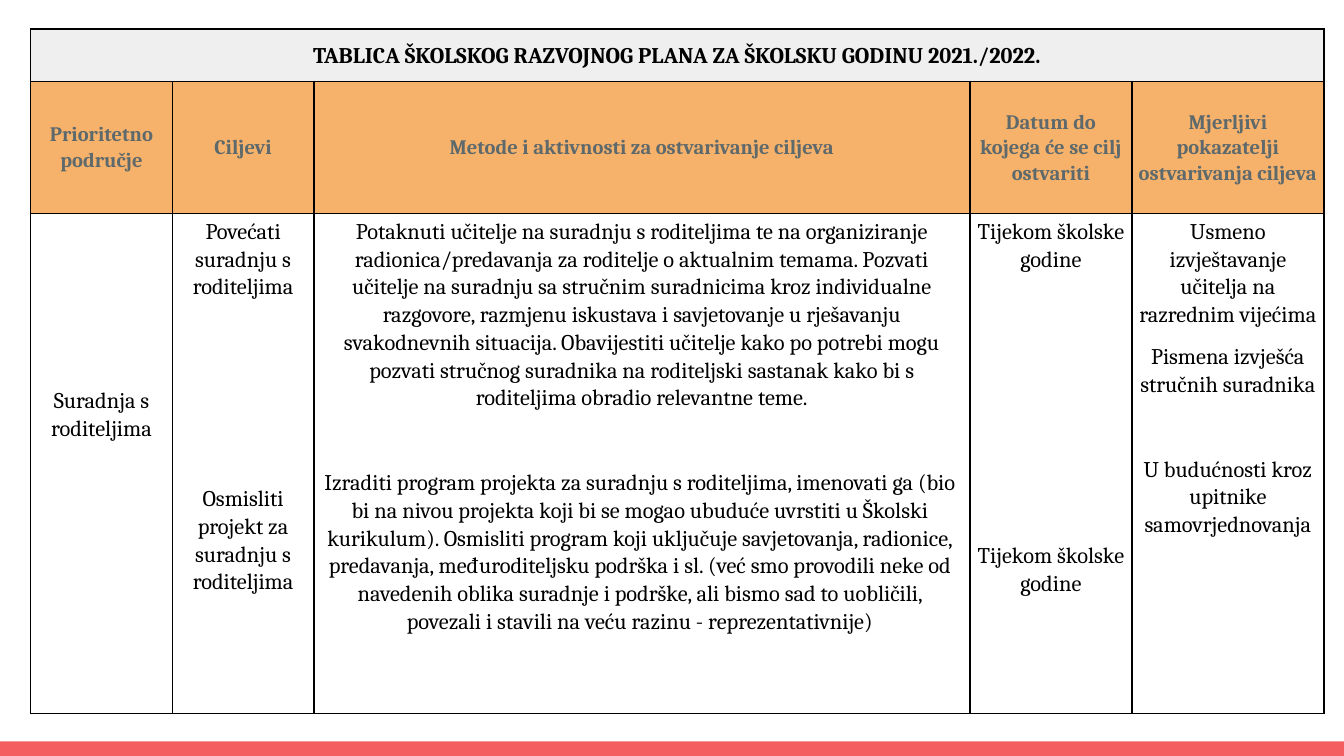
from dataclasses import dataclass

from lxml.etree import SubElement
from pptx import Presentation
from pptx.dml.color import RGBColor
from pptx.enum.shapes import MSO_SHAPE
from pptx.enum.text import MSO_ANCHOR, PP_ALIGN
from pptx.oxml.ns import qn
from pptx.util import Pt


@dataclass(frozen=True)
class Theme:
    font: str = "Cambria"
    black: str = "000000"
    white: str = "FFFFFF"
    title_fill: str = "EFEFEF"
    header_fill: str = "F6B26B"
    header_text: str = "5E696C"
    accent: str = "F55E61"
    body_size: float = 12
    header_size: float = 11
    line_spacing: float = 1.08
    gap: float = 7.7
    row_step: float = 22.7  # one text line plus the gap


THEME = Theme()

COLUMNS = [76, 75.7, 351.6, 86.7, 102.9]
ROWS = [28, 70.8, 268]
METHODS = 2  # column whose first paragraph is set slightly narrower

TITLE = "TABLICA ŠKOLSKOG RAZVOJNOG PLANA ZA ŠKOLSKU GODINU 2021./2022."
HEADERS = [
    "Prioritetno područje",
    "Ciljevi",
    "Metode i aktivnosti za ostvarivanje ciljeva",
    "Datum do kojega će se cilj ostvariti",
    "Mjerljivi pokazatelji ostvarivanja ciljeva",
]
# Each column holds (steps of extra space above, text)
PLAN = [
    [(4, "Suradnja s roditeljima")],
    [(0, "Povećati suradnju s roditeljima"),
     (4, "Osmisliti projekt za suradnju s roditeljima")],
    [(0, "Potaknuti učitelje na suradnju s roditeljima te na organiziranje "
         "radionica/predavanja za roditelje o aktualnim temama. Pozvati učitelje "
         "na suradnju sa stručnim suradnicima kroz individualne razgovore, "
         "razmjenu iskustava i savjetovanje u rješavanju svakodnevnih situacija. "
         "Obavijestiti učitelje kako po potrebi mogu pozvati stručnog suradnika "
         "na roditeljski sastanak kako bi s roditeljima obradio relevantne teme."),
     (1, "Izraditi program projekta za suradnju s roditeljima, imenovati ga (bio "
         "bi na nivou projekta koji bi se mogao ubuduće uvrstiti u Školski "
         "kurikulum). Osmisliti program koji uključuje savjetovanja, radionice, "
         "predavanja, međuroditeljsku podrška i sl. (već smo provodili neke od "
         "navedenih oblika suradnje i podrške, ali bismo sad to uobličili, "
         "povezali i stavili na veću razinu - reprezentativnije)")],
    [(0, "Tijekom školske godine"), (6, "Tijekom školske godine")],
    [(0, "Usmeno izvještavanje učitelja na razrednim vijećima"),
     (0, "Pismena izvješća stručnih suradnika"),
     (1, "U budućnosti kroz upitnike samovrjednovanja")],
]


def rgb(color):
    return RGBColor.from_string(color)


def add_borders(cell):
    tc_pr = cell._tc.get_or_add_tcPr()
    for i, side in enumerate(("lnL", "lnR", "lnT", "lnB")):
        ln = SubElement(tc_pr, qn(f"a:{side}"), w=str(Pt(1)))
        fill = SubElement(ln, qn("a:solidFill"))
        SubElement(fill, qn("a:srgbClr"), val=THEME.black)
        tc_pr.insert(i, ln)  # lines come before the fill


def indent_sides(p, width):
    p_pr = p._p.get_or_add_pPr()
    for side in ("marL", "marR"):
        p_pr.set(side, str(Pt(width)))


def fill_cell(cell, entries, fill, color=THEME.black, size=THEME.body_size,
              bold=False, anchor=MSO_ANCHOR.TOP):
    cell.fill.solid()
    cell.fill.fore_color.rgb = rgb(fill)
    add_borders(cell)
    cell.vertical_anchor = anchor
    cell.margin_left = cell.margin_right = Pt(2.7)
    # Space above the first paragraph belongs to the cell margin
    cell.margin_top = Pt(2 + entries[0][0] * THEME.row_step)
    cell.margin_bottom = Pt(2.4)

    tf = cell.text_frame
    tf.text = "\n".join(text for _, text in entries)
    for i, (p, (steps, _)) in enumerate(zip(tf.paragraphs, entries)):
        p.alignment = PP_ALIGN.CENTER
        p.line_spacing = THEME.line_spacing
        p.space_before = Pt(THEME.gap + steps * THEME.row_step if i else 0)
        p.space_after = Pt(0)
        font = p.runs[0].font
        font.name, font.size, font.bold = THEME.font, Pt(size), bold
        font.color.rgb = rgb(color)
    p.space_after = Pt(THEME.gap)


def add_plan_table(s, left, top):
    frame = s.shapes.add_table(len(ROWS), len(COLUMNS), Pt(left), Pt(top),
                               Pt(sum(COLUMNS)), Pt(sum(ROWS)))
    table = frame.table
    table.first_row = table.horz_banding = False
    for column, width in zip(table.columns, COLUMNS):
        column.width = Pt(width)
    for row, height in zip(table.rows, ROWS):
        row.height = Pt(height)

    # Title row across all columns
    table.cell(0, 0).merge(table.cell(0, len(COLUMNS) - 1))
    fill_cell(table.cell(0, 0), [(0, TITLE)], THEME.title_fill, bold=True,
              anchor=MSO_ANCHOR.MIDDLE)
    for c in range(1, len(COLUMNS)):
        add_borders(table.cell(0, c))

    # Column headers and plan
    for c, (header, entries) in enumerate(zip(HEADERS, PLAN)):
        fill_cell(table.cell(1, c), [(0, header)], THEME.header_fill,
                  THEME.header_text, THEME.header_size, True, MSO_ANCHOR.MIDDLE)
        fill_cell(table.cell(2, c), entries, THEME.white)
    indent_sides(table.cell(2, METHODS).text_frame.paragraphs[0], 2)


def add_bottom_bar(s, left, top, width, height):
    sp = s.shapes.add_shape(MSO_SHAPE.RECTANGLE, Pt(left), Pt(top),
                            Pt(width), Pt(height))
    sp.shadow.inherit = False
    sp.fill.solid()
    sp.fill.fore_color.rgb = rgb(THEME.accent)
    sp.line.fill.background()


def main():
    prs = Presentation()
    prs.slide_width, prs.slide_height = Pt(720), Pt(405)
    s = prs.slides.add_slide(prs.slide_layouts[6])
    s.background.fill.solid()
    s.background.fill.fore_color.rgb = rgb(THEME.white)
    add_bottom_bar(s, 0, 397.2, 720, 7.8)
    add_plan_table(s, 16.4, 15.6)
    prs.save("out.pptx")


if __name__ == "__main__":
    main()
